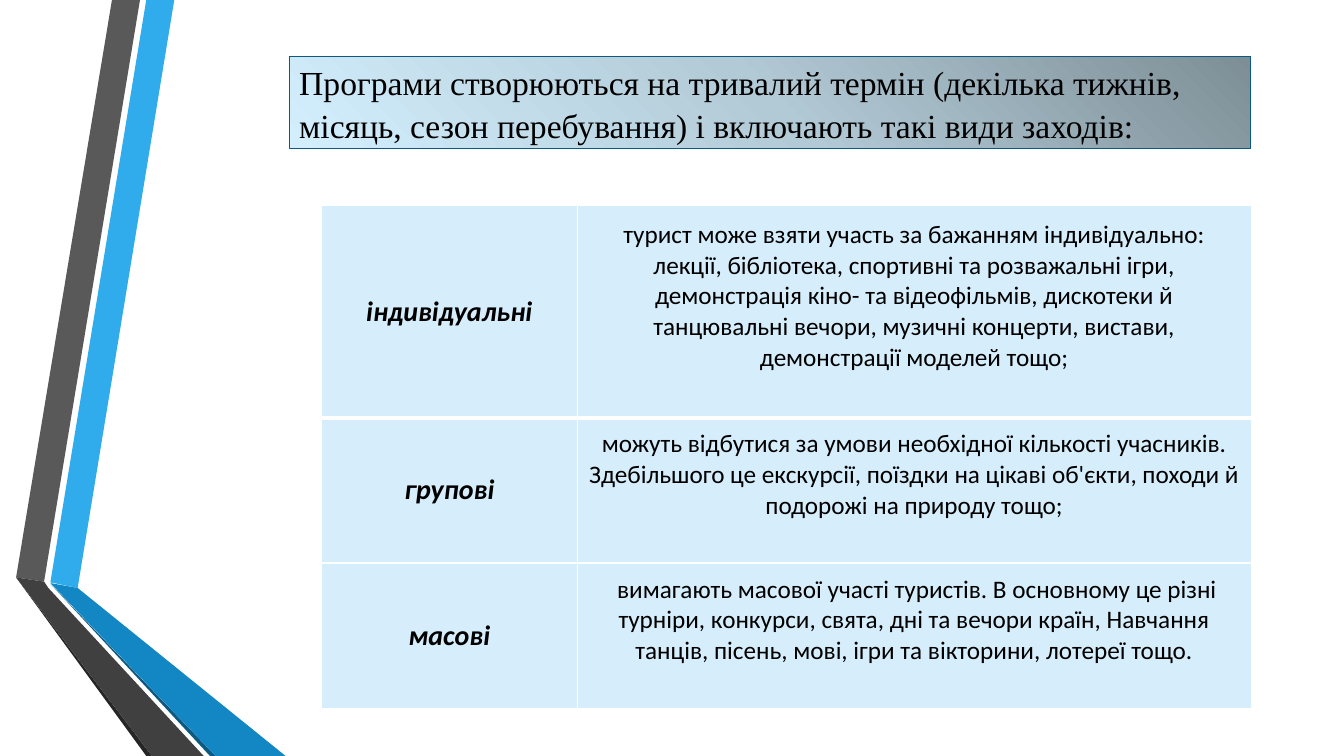
from copy import deepcopy

from lxml import etree
from pptx import Presentation
from pptx.dml.color import RGBColor
from pptx.enum.text import MSO_ANCHOR as Anchor, MSO_AUTO_SIZE as AutoSize, PP_ALIGN as Align
from pptx.oxml.ns import qn
from pptx.util import Pt

SLIDE_WIDTH, SLIDE_HEIGHT = 960, 540
TITLE_BOX = (206.5, 40.3, 687, 65.5)
TABLE_BOX = (229.7, 146.9, 664, 359)

TITLE = ("Програми створюються на тривалий термін (декілька тижнів, "
         "місяць, сезон перебування) і включають такі види заходів:")
TITLE_GRADIENT = [(0, "7D8E96"), (0.5, "B2CAD6"), (1, "D3EFFE")]

ACTIVITIES = [
    ("індивідуальні",
     "турист може взяти участь за бажанням індивідуально: лекції, бібліотека, "
     "спортивні та розважальні ігри, демонстрація кіно- та відеофільмів, дискотеки й "
     "танцювальні вечори, музичні концерти, вистави, демонстрації моделей тощо;"),
    ("групові",
     "можуть відбутися за умови необхідної кількості учасників. Здебільшого це "
     "екскурсії, поїздки на цікаві об'єкти, походи й подорожі на природу тощо;"),
    ("масові",
     " вимагають масової участі туристів. В основному це різні турніри, конкурси, "
     "свята, дні та вечори країн, Навчання танців, пісень, мові, ігри та вікторини, "
     "лотереї тощо."),
]
COLUMN_SHARES = (0.275, 0.725)
ROW_SHARES = (0.422, 0.289, 0.289)

# Outlines in points from the corner of the ribbon region
RIBBONS = [
    ("30ACEC", [(36, 416), (55.5, 420), (124.5, 0), (104.5, 0)]),
    ("595959", [(100, 0), (80, 0), (11.5, 412.5), (31.5, 415.5)]),
    ("262626", [(11.5, 412.5), (104.5, 540), (108.5, 540)]),
    ("0C5A82", [(36, 417), (150, 540), (154, 540)]),
    ("1287C3", [(36, 416.5), (154, 540), (204, 540), (55.5, 420)]),
    ("404040", [(145.5, 540), (34.5, 420), (31.5, 415.5), (11.5, 412.5), (108.5, 540)]),
]


def color(hex_value):
    return RGBColor.from_string(hex_value)


def add_text(paragraph, text, font_name, size, emphasized=False):
    run = paragraph.add_run()
    run.text = text
    run.font.name = font_name
    run.font.size = Pt(size)
    run.font.bold = run.font.italic = emphasized
    run.font.color.rgb = color("000000")


def add_ribbons(slide, left, top):
    for fill, outline in RIBBONS:
        points = [(Pt(left + x), Pt(top + y)) for x, y in outline]
        builder = slide.shapes.build_freeform(*points[0])
        builder.add_line_segments(points[1:], close=True)
        ribbon = builder.convert_to_shape()
        ribbon.shadow.inherit = False
        ribbon.fill.solid()
        ribbon.fill.fore_color.rgb = color(fill)
        ribbon.line.fill.background()


def fill_title(slide, left, top, width, height):
    title = slide.shapes.title
    title.left, title.top = Pt(left), Pt(top)
    title.width, title.height = Pt(width), Pt(height)

    title.fill.gradient()
    stop_list = title.element.spPr.find(".//" + qn("a:gsLst"))
    stop_list.insert(1, deepcopy(stop_list[0]))
    for stop, (position, stop_color) in zip(title.fill.gradient_stops, TITLE_GRADIENT):
        stop.position = position
        stop.color.rgb = color(stop_color)
    title.fill.gradient_angle = 225
    title.line.color.rgb = color("0C5A82")
    title.line.width = Pt(0.75)

    frame = title.text_frame
    frame.word_wrap = True
    frame.auto_size = AutoSize.NONE
    frame.vertical_anchor = Anchor.MIDDLE
    paragraph = frame.paragraphs[0]
    paragraph.alignment = Align.LEFT
    paragraph.line_spacing = 1.07
    add_text(paragraph, TITLE, "Times New Roman", 24)


def set_borders(cell, **widths):
    """Draw white cell borders; widths are points by side: L, R, T, B."""
    properties = cell._tc.get_or_add_tcPr()
    for side, width in widths.items():
        line = etree.SubElement(properties, qn(f"a:ln{side}"), w=str(Pt(width)))
        solid = etree.SubElement(line, qn("a:solidFill"))
        etree.SubElement(solid, qn("a:srgbClr"), val="FFFFFF")


def add_activity_table(slide, left, top, width, height):
    frame = slide.shapes.add_table(len(ACTIVITIES), 2, Pt(left), Pt(top), Pt(width), Pt(height))
    table = frame.table
    table.first_row = table.horz_banding = False
    for column, share in zip(table.columns, COLUMN_SHARES):
        column.width = Pt(width * share)
    for row, share in zip(table.rows, ROW_SHARES):
        row.height = Pt(height * share)

    for row_index, texts in enumerate(ACTIVITIES):
        for column_index, text in enumerate(texts):
            is_name = column_index == 0
            cell = table.cell(row_index, column_index)
            set_borders(cell, L=1, R=1, T=3 if row_index == 1 else 1,
                        B=3 if row_index == 0 else 1)
            cell.fill.solid()
            cell.fill.fore_color.rgb = color("D6EEFB")
            cell.vertical_anchor = Anchor.MIDDLE
            if not is_name:
                cell.margin_bottom = Pt(25.6)
            paragraph = cell.text_frame.paragraphs[0]
            paragraph.alignment = Align.CENTER
            add_text(paragraph, text, "Calibri", 20 if is_name else 18, emphasized=is_name)


def main():
    presentation = Presentation()
    presentation.slide_width = Pt(SLIDE_WIDTH)
    presentation.slide_height = Pt(SLIDE_HEIGHT)
    slide = presentation.slides.add_slide(presentation.slide_layouts.get_by_name("Title Only"))
    add_ribbons(slide, 0, 0)
    fill_title(slide, *TITLE_BOX)
    add_activity_table(slide, *TABLE_BOX)
    presentation.save("out.pptx")


if __name__ == "__main__":
    main()
